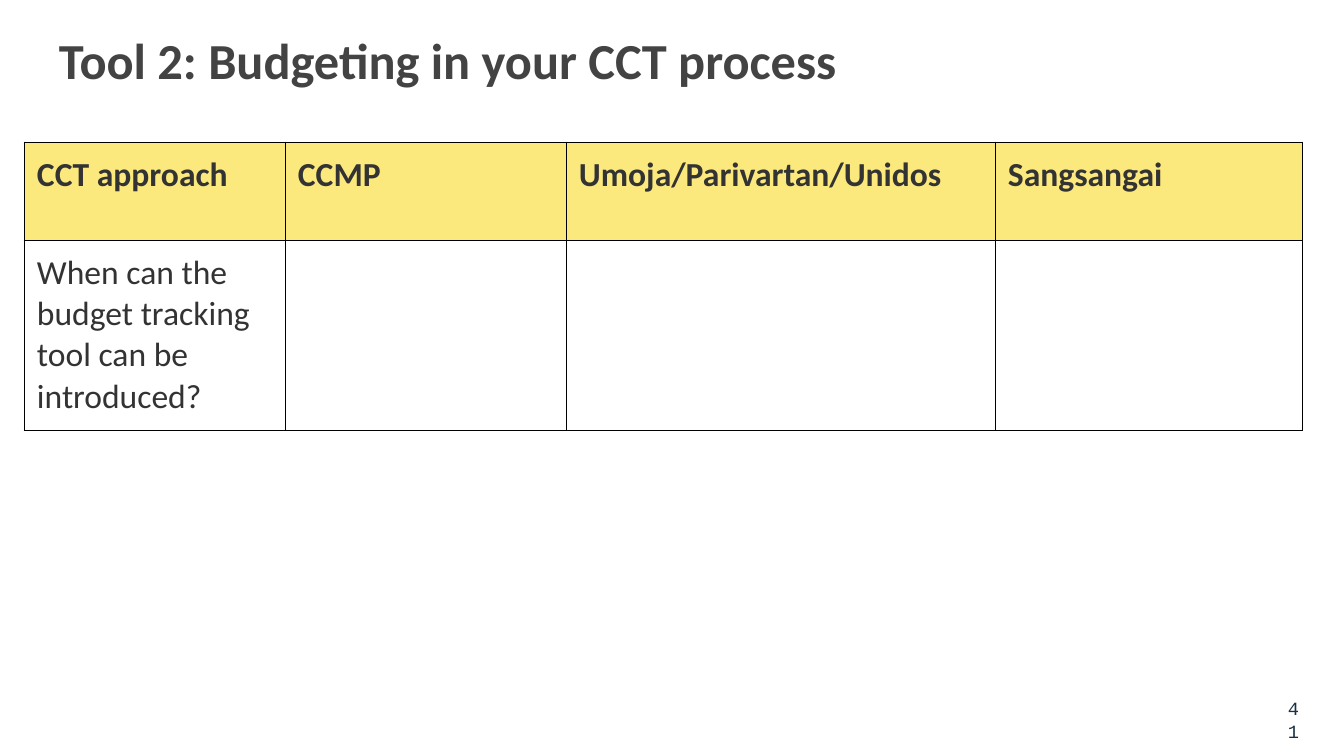
import pptx
import pptx.dml.color
import pptx.enum.text
import pptx.oxml
import pptx.oxml.ns
import pptx.util

PX = 914400 / 134.4
INSET = 13
TITLE_GREY = pptx.dml.color.RGBColor(0x43, 0x43, 0x43)
TEXT_GREY = pptx.dml.color.RGBColor(0x33, 0x33, 0x33)
NAVY = pptx.dml.color.RGBColor(0x17, 0x31, 0x45)
YELLOW = pptx.dml.color.RGBColor(0xFC, 0xE9, 0x7D)
WHITE = pptx.dml.color.RGBColor(0xFF, 0xFF, 0xFF)
BORDER = (
    '<a:{side} {ns} w="6350"><a:solidFill><a:srgbClr val="000000"/>'
    '</a:solidFill><a:prstDash val="solid"/></a:{side}>'
)


def px(length):
    return pptx.util.Emu(round(length * PX))


def style(para, font_name, size, color, bold):
    para.font.name = font_name
    para.font.size = pptx.util.Pt(size)
    para.font.bold = bold
    para.font.color.rgb = color
    for span in para.runs:
        span.font.name = font_name
        span.font.size = pptx.util.Pt(size)
        span.font.bold = bold
        span.font.color.rgb = color


deck = pptx.Presentation()
deck.slide_width = px(1344)
deck.slide_height = px(756)
page = deck.slides.add_slide(deck.slide_layouts[6])

LEFT, RIGHT = pptx.enum.text.PP_ALIGN.LEFT, pptx.enum.text.PP_ALIGN.RIGHT
labels = [
    ("41", (1265, 684, 47, 40), "Courier New", 10, NAVY, False, RIGHT),
    ("Tool 2: Budgeting in your CCT process", (46, 16, 1290, 85),
     "Calibri", 27, TITLE_GREY, True, LEFT),
]
for text, place, font_name, size, color, bold, align in labels:
    box = page.shapes.add_textbox(*map(px, place))
    frame = box.text_frame
    frame.word_wrap = True
    frame.margin_left = frame.margin_right = px(INSET)
    frame.margin_top = frame.margin_bottom = px(INSET)
    frame.text = text
    frame.paragraphs[0].alignment = align
    style(frame.paragraphs[0], font_name, size, color, bold)

column_widths = [261, 281, 429, 308]
row_heights = [98, 190]
rows = [
    ["CCT approach", "CCMP", "Umoja/Parivartan/Unidos", "Sangsangai"],
    ["When can the budget tracking tool can be introduced?", "", "", ""],
]
table = page.shapes.add_table(
    len(rows), len(column_widths), px(24), px(142),
    px(sum(column_widths)), px(sum(row_heights)),
).table
for column, width in zip(table.columns, column_widths):
    column.width = px(width)
for row, height in zip(table.rows, row_heights):
    row.height = px(height)

for row_index, texts in enumerate(rows):
    header = row_index == 0
    for column_index, text in enumerate(texts):
        cell = table.cell(row_index, column_index)
        cell.margin_left = cell.margin_right = px(INSET)
        cell.margin_top = cell.margin_bottom = px(INSET)
        cell.text_frame.text = text
        style(cell.text_frame.paragraphs[0], "Calibri", 18, TEXT_GREY, header)
        properties = cell._tc.get_or_add_tcPr()
        for side in ("lnL", "lnR", "lnT", "lnB"):
            border = BORDER.format(side=side, ns=pptx.oxml.ns.nsdecls("a"))
            properties.append(pptx.oxml.parse_xml(border))
        cell.fill.solid()
        cell.fill.fore_color.rgb = YELLOW if header else WHITE

deck.save("out.pptx")
